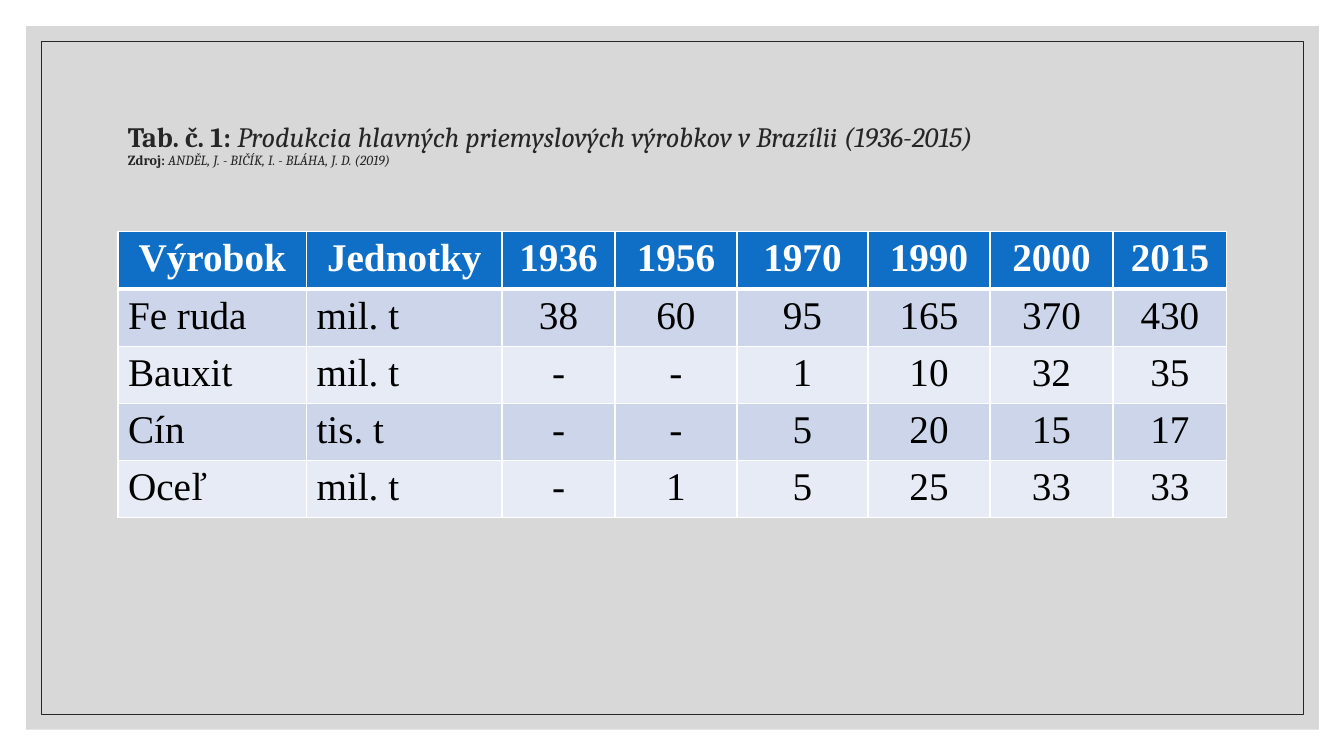
import pptx
import pptx.util
import pptx.dml.color
import pptx.enum.shapes
import pptx.enum.text
import pptx.oxml
import pptx.oxml.ns

Inches = pptx.util.Inches
Pt = pptx.util.Pt
RGBColor = pptx.dml.color.RGBColor
Align = pptx.enum.text.PP_ALIGN

WHITE = RGBColor(0xFF, 0xFF, 0xFF)
BLACK = RGBColor(0, 0, 0)
GRAY = RGBColor(0xBF, 0xBF, 0xBF)
DARK = RGBColor(0x26, 0x26, 0x26)
BLUE = RGBColor(0x0F, 0x6F, 0xC6)
BANDS = (RGBColor(0xCC, 0xD5, 0xEA), RGBColor(0xE7, 0xEB, 0xF5))

TITLE_LINES = [
    (20, "Tab. č. 1: ", "Produkcia hlavných priemyslových výrobkov v Brazílii (1936-2015)"),
    (10, "Zdroj: ", "ANDĚL, J. - BIČÍK, I. - BLÁHA, J. D. (2019)"),
]
COLUMN_WIDTHS = [1.87, 1.94, 1.12, 1.21, 1.3, 1.21, 1.22, 1.13]
HEADER_HEIGHT, ROW_HEIGHT = 0.56, 0.53
PRODUCTION = [
    ["Výrobok", "Jednotky", "1936", "1956", "1970", "1990", "2000", "2015"],
    ["Fe ruda", "mil. t", "38", "60", "95", "165", "370", "430"],
    ["Bauxit", "mil. t", "-", "-", "1", "10", "32", "35"],
    ["Cín", "tis. t", "-", "-", "5", "20", "15", "17"],
    ["Oceľ", "mil. t", "-", "1", "5", "25", "33", "33"],
]


class SlideBuilder:
    """Draws styled elements on one slide."""

    def __init__(self, page):
        self.page = page
        self.title_font = "Cambria"
        self.table_font = "Times New Roman"

    def add_span(self, para, text, color, **formats):
        span = para.add_run()
        span.text = text
        span.font.color.rgb = color
        for name, value in formats.items():
            setattr(span.font, name, value)

    def add_rectangle(self, left, top, width, height, fill=None, opacity=100, line=None):
        box = self.page.shapes.add_shape(
            pptx.enum.shapes.MSO_SHAPE.RECTANGLE,
            Inches(left), Inches(top), Inches(width), Inches(height))
        box.shadow.inherit = False
        if fill is None:
            box.fill.background()
        else:
            box.fill.solid()
            box.fill.fore_color.rgb = fill
            color = box.fill._xPr.find(".//" + pptx.oxml.ns.qn("a:srgbClr"))
            alpha = color.makeelement(pptx.oxml.ns.qn("a:alpha"), {"val": str(opacity * 1000)})
            color.append(alpha)
        if line is None:
            box.line.fill.background()
        else:
            box.line.color.rgb = line
            box.line.width = Pt(0.5)

    def add_title(self, left, top, width, height, lines):
        box = self.page.shapes.add_textbox(
            Inches(left), Inches(top), Inches(width), Inches(height))
        box.text_frame.word_wrap = True
        box.text_frame.vertical_anchor = pptx.enum.text.MSO_ANCHOR.MIDDLE
        para = box.text_frame.paragraphs[0]
        para.line_spacing = 0.9
        for index, (size, label, text) in enumerate(lines):
            if index:
                para.add_line_break()
            formats = {"name": self.title_font, "size": Pt(size)}
            self.add_span(para, label, DARK, bold=True, **formats)
            self.add_span(para, text, DARK, italic=True, **formats)

    def add_borders(self, cell, bottom_width, top_width):
        properties = cell._tc.get_or_add_tcPr()
        for side, width in {"L": 1, "R": 1, "T": top_width, "B": bottom_width}.items():
            properties.append(pptx.oxml.parse_xml(
                f'<a:ln{side} {pptx.oxml.ns.nsdecls("a")} w="{Pt(width)}">'
                f'<a:solidFill><a:srgbClr val="{WHITE}"/></a:solidFill></a:ln{side}>'))

    def add_table(self, left, top, widths, rows):
        heights = [HEADER_HEIGHT] + [ROW_HEIGHT] * (len(rows) - 1)
        table = self.page.shapes.add_table(
            len(rows), len(widths), Inches(left), Inches(top),
            Inches(sum(widths)), Inches(sum(heights))).table
        for column, width in zip(table.columns, widths):
            column.width = Inches(width)
        for row_index, values in enumerate(rows):
            header = row_index == 0
            table.rows[row_index].height = Inches(heights[row_index])
            for column_index, value in enumerate(values):
                cell = table.cell(row_index, column_index)
                self.add_borders(cell, 3 if header else 1, 3 if row_index == 1 else 1)
                cell.fill.solid()
                cell.fill.fore_color.rgb = BLUE if header else BANDS[(row_index - 1) % 2]
                para = cell.text_frame.paragraphs[0]
                para.alignment = Align.CENTER if header or column_index > 1 else Align.LEFT
                self.add_span(para, value, WHITE if header else BLACK,
                              name=self.table_font, size=Pt(28), bold=header)


def main():
    deck = pptx.Presentation()
    deck.slide_width, deck.slide_height = Inches(13.33), Inches(7.5)
    builder = SlideBuilder(deck.slides.add_slide(deck.slide_layouts[6]))
    builder.add_rectangle(0.26, 0.26, 12.82, 6.98, fill=GRAY, opacity=60)
    builder.add_rectangle(0.41, 0.41, 12.52, 6.68, line=DARK)
    builder.add_title(1.17, 0.7, 11, 1.5, TITLE_LINES)
    builder.add_table(1.17, 2.3, COLUMN_WIDTHS, PRODUCTION)
    deck.save("out.pptx")


if __name__ == "__main__":
    main()
